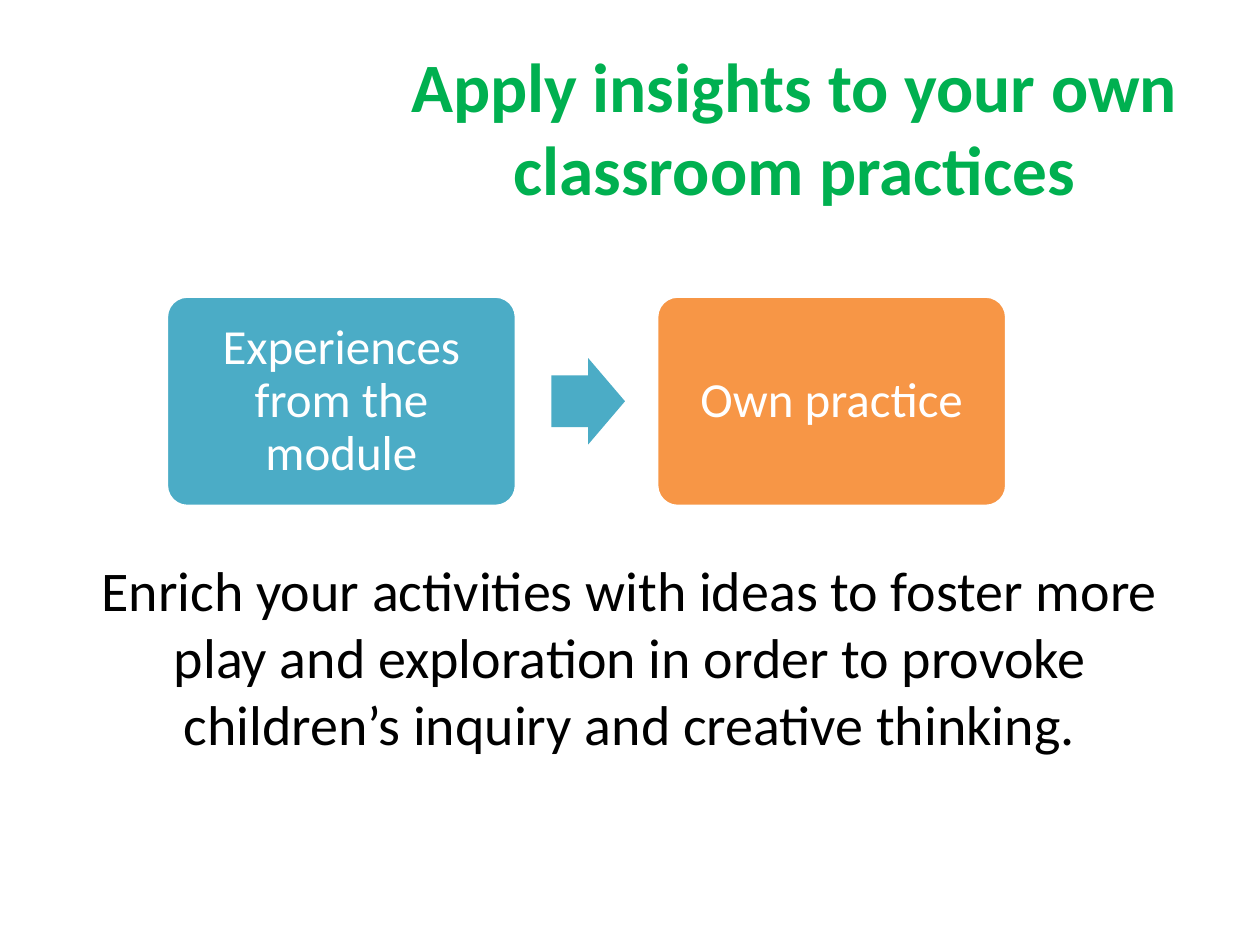
import pptx
import pptx.util
import pptx.dml.color
import pptx.enum.shapes
import pptx.enum.text

COLS, ROWS = 100, 75
UNIT = pptx.util.Inches(0.1)
FONT = "Calibri"
HUES = {
    "title": "00B050",
    "body": "000000",
    "white": "FFFFFF",
    "teal": "4BACC6",
    "orange": "F79646",
}
KINDS = pptx.enum.shapes.MSO_SHAPE
ANCHOR = pptx.enum.text.MSO_ANCHOR


def color(name):
    return pptx.dml.color.RGBColor.from_string(HUES[name])


def scale(box):
    """Turn columns and rows into slide lengths."""
    return [round(part * UNIT) for part in box]


def write(shape, text, size, hue, bold=False, anchor=ANCHOR.MIDDLE, pad=None, lead=None):
    frame = shape.text_frame
    frame.word_wrap = True
    frame.vertical_anchor = anchor
    if pad is not None:
        frame.margin_left = frame.margin_right = pad
        frame.margin_top = frame.margin_bottom = pad
    para = frame.paragraphs[0]
    para.alignment = pptx.enum.text.PP_ALIGN.CENTER
    if lead:
        para.line_spacing = lead
    run = para.add_run()
    run.text = text
    run.font.name = FONT
    run.font.size = pptx.util.Pt(size)
    run.font.bold = bold
    run.font.color.rgb = color(hue)


def shape(slide, kind, box, fill, bends):
    item = slide.shapes.add_shape(kind, *scale(box))
    item.shadow.inherit = False
    item.fill.solid()
    item.fill.fore_color.rgb = color(fill)
    item.line.fill.background()
    for spot, bend in enumerate(bends):
        item.adjustments[spot] = bend
    return item


def label(slide, box, text, **style):
    write(slide.shapes.add_textbox(*scale(box)), text, **style)


def card(slide, box, text, fill):
    item = shape(slide, KINDS.ROUNDED_RECTANGLE, box, fill, [0.1])
    item.line.color.rgb = color("white")
    item.line.width = pptx.util.Pt(2)
    write(item, text, size=28, hue="white", pad=pptx.util.Inches(0.12), lead=0.9)


def flow(slide, box, steps):
    """Place cards in a row, 0.4 card widths apart, with an arrow in each gap."""
    left, top, width, height = box
    wide = width / (1.4 * len(steps) - 0.4)
    tall = 0.41 * height
    for spot, (text, fill) in enumerate(steps):
        start = left + 1.4 * spot * wide
        card(slide, (start, top, wide, height), text, fill)
        if spot < len(steps) - 1:
            area = (start + 1.1 * wide, top + (height - tall) / 2, 0.21 * wide, tall)
            shape(slide, KINDS.RIGHT_ARROW, area, fill, [0.6, 0.5])


def main():
    deck = pptx.Presentation()
    deck.slide_width, deck.slide_height = COLS * UNIT, ROWS * UNIT
    slide = deck.slides.add_slide(deck.slide_layouts[6])
    label(slide, (31.1, 3, 63.9, 14), "Apply insights to your own classroom practices",
          size=39.6, hue="title", bold=True)
    label(slide, (6.9, 43.6, 86.2, 28.3),
          "Enrich your activities with ideas to foster more play and exploration "
          "in order to provoke children’s inquiry and creative thinking.",
          size=32, hue="body", anchor=ANCHOR.TOP)
    flow(slide, (13.2, 23.5, 66.7, 16.7),
         [("Experiences from the module", "teal"), ("Own practice", "orange")])
    deck.save("out.pptx")


if __name__ == "__main__":
    main()
